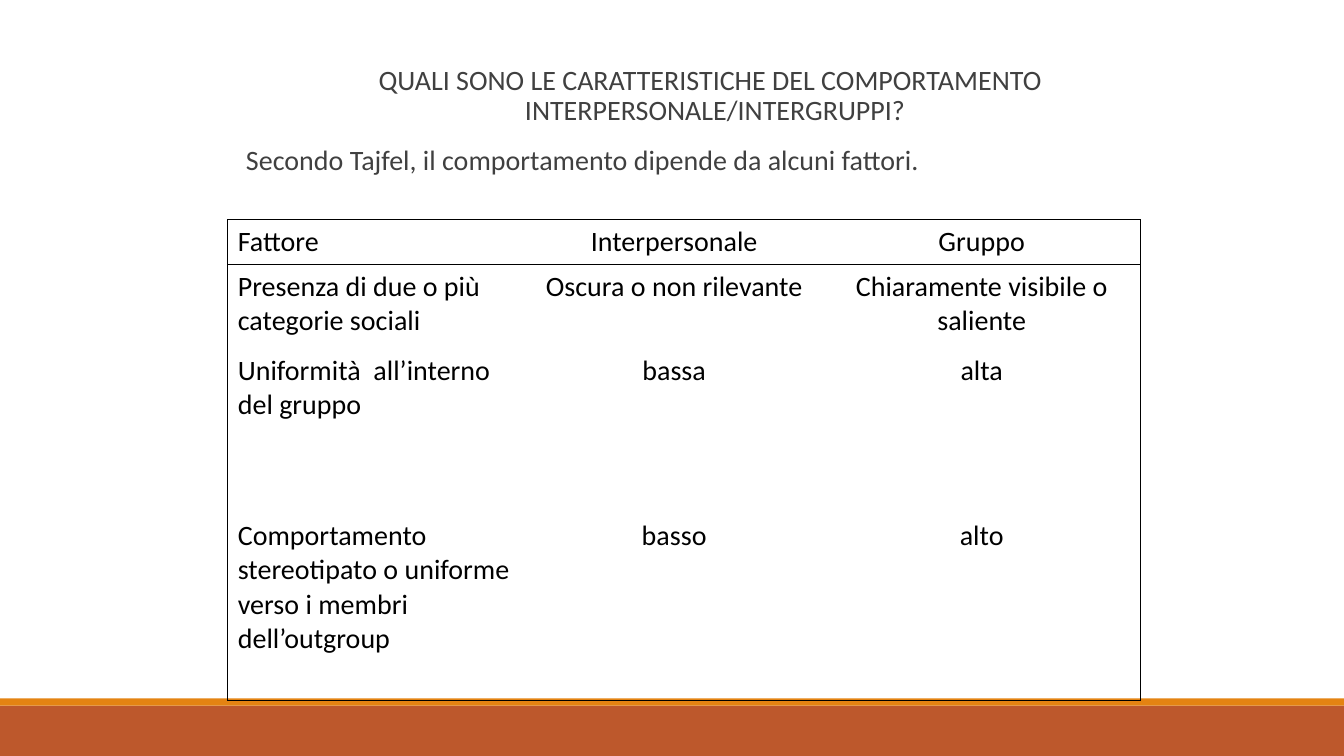
from lxml import etree
from pptx import Presentation
from pptx.dml.color import RGBColor
from pptx.enum.shapes import MSO_SHAPE
from pptx.enum.text import PP_ALIGN
from pptx.oxml.ns import qn
from pptx.util import Cm, Pt

RECTANGLE = MSO_SHAPE.RECTANGLE
LEFT, CENTER = PP_ALIGN.LEFT, PP_ALIGN.CENTER

FONT = "Calibri"
COLORS = {"footer": "BD582C", "stripe": "E48312", "heading": "404040", "ink": "000000"}

INTRO = [
    ("QUALI SONO LE CARATTERISTICHE DEL COMPORTAMENTO INTERPERSONALE/INTERGRUPPI?", CENTER),
    ("Secondo Tajfel, il comportamento dipende da alcuni fattori.", LEFT),
]
FACTORS = [
    ("Fattore", "Interpersonale", "Gruppo"),
    ("Presenza di due o più categorie sociali", "Oscura o non rilevante",
     "Chiaramente visibile o saliente"),
    ("Uniformità  all’interno del gruppo", "bassa", "alta"),
    ("Comportamento stereotipato o uniforme verso i membri dell’outgroup", "basso", "alto"),
]
COLUMN_WIDTHS = [7.5, 7.5, 8]
ROW_HEIGHTS = [1.13, 2.12, 4.16, 4.7]
BARS = [(17.78, 1.27, "footer"), (17.6, 0.18, "stripe")]
SLIDE_WIDTH, SLIDE_HEIGHT = 33.87, 19.05


def style_paragraph(para, text, align, color):
    para.text = text
    para.alignment = align
    para.font.name = FONT
    para.font.size = Pt(20)
    para.font.color.rgb = RGBColor.from_string(COLORS[color])


def add_bar(slide, top, height, color):
    bar = slide.shapes.add_shape(RECTANGLE, 0, Cm(top), Cm(SLIDE_WIDTH), Cm(height))
    bar.shadow.inherit = False
    bar.fill.solid()
    bar.fill.fore_color.rgb = RGBColor.from_string(COLORS[color])
    bar.line.fill.background()


def add_intro(slide):
    box = slide.shapes.add_textbox(Cm(6.2), Cm(1.55), Cm(23.4), Cm(3.99))
    frame = box.text_frame
    frame.word_wrap = True
    frame.margin_left = frame.margin_right = 0
    for index, (text, align) in enumerate(INTRO):
        para = frame.add_paragraph() if index else frame.paragraphs[0]
        style_paragraph(para, text, align, "heading")
        para.line_spacing = 0.9
        para.space_before = Pt(12)
        para.space_after = Pt(2)
        properties = para._p.get_or_add_pPr()
        properties.set("marL", str(Cm(0.25)))
        properties.set("indent", str(-Cm(0.25)))


def set_borders(cell, widths):
    properties = cell._tc.get_or_add_tcPr()
    for position, (side, width) in enumerate(widths.items()):
        line = etree.Element(qn(f"a:ln{side}"))
        properties.insert(position, line)
        if width:
            line.set("w", str(Pt(width)))
            fill = etree.SubElement(line, qn("a:solidFill"))
            etree.SubElement(fill, qn("a:srgbClr")).set("val", COLORS["ink"])
        else:
            etree.SubElement(line, qn("a:noFill"))


def add_factor_table(slide):
    last_row, last_column = len(FACTORS) - 1, len(COLUMN_WIDTHS) - 1
    table = slide.shapes.add_table(
        len(FACTORS), len(COLUMN_WIDTHS), Cm(5.74), Cm(5.54),
        Cm(sum(COLUMN_WIDTHS)), Cm(sum(ROW_HEIGHTS))).table
    table.first_row = table.horz_banding = False
    for column, width in zip(table.columns, COLUMN_WIDTHS):
        column.width = Cm(width)
    for row, height in zip(table.rows, ROW_HEIGHTS):
        row.height = Cm(height)
    for row, texts in enumerate(FACTORS):
        for column, text in enumerate(texts):
            cell = table.cell(row, column)
            style_paragraph(cell.text_frame.paragraphs[0], text,
                            CENTER if column else LEFT, "ink")
            cell.fill.background()
            set_borders(cell, {
                "L": 0.75 if column == 0 else 0,
                "R": 0.75 if column == last_column else 0,
                "T": 1 if row <= 1 else 0,
                "B": 1 if row in (0, last_row) else 0,
            })


def main():
    deck = Presentation()
    deck.slide_width, deck.slide_height = Cm(SLIDE_WIDTH), Cm(SLIDE_HEIGHT)
    page = deck.slides.add_slide(deck.slide_layouts[6])
    for bar in BARS:
        add_bar(page, *bar)
    add_intro(page)
    add_factor_table(page)
    deck.save("out.pptx")


if __name__ == "__main__":
    main()
